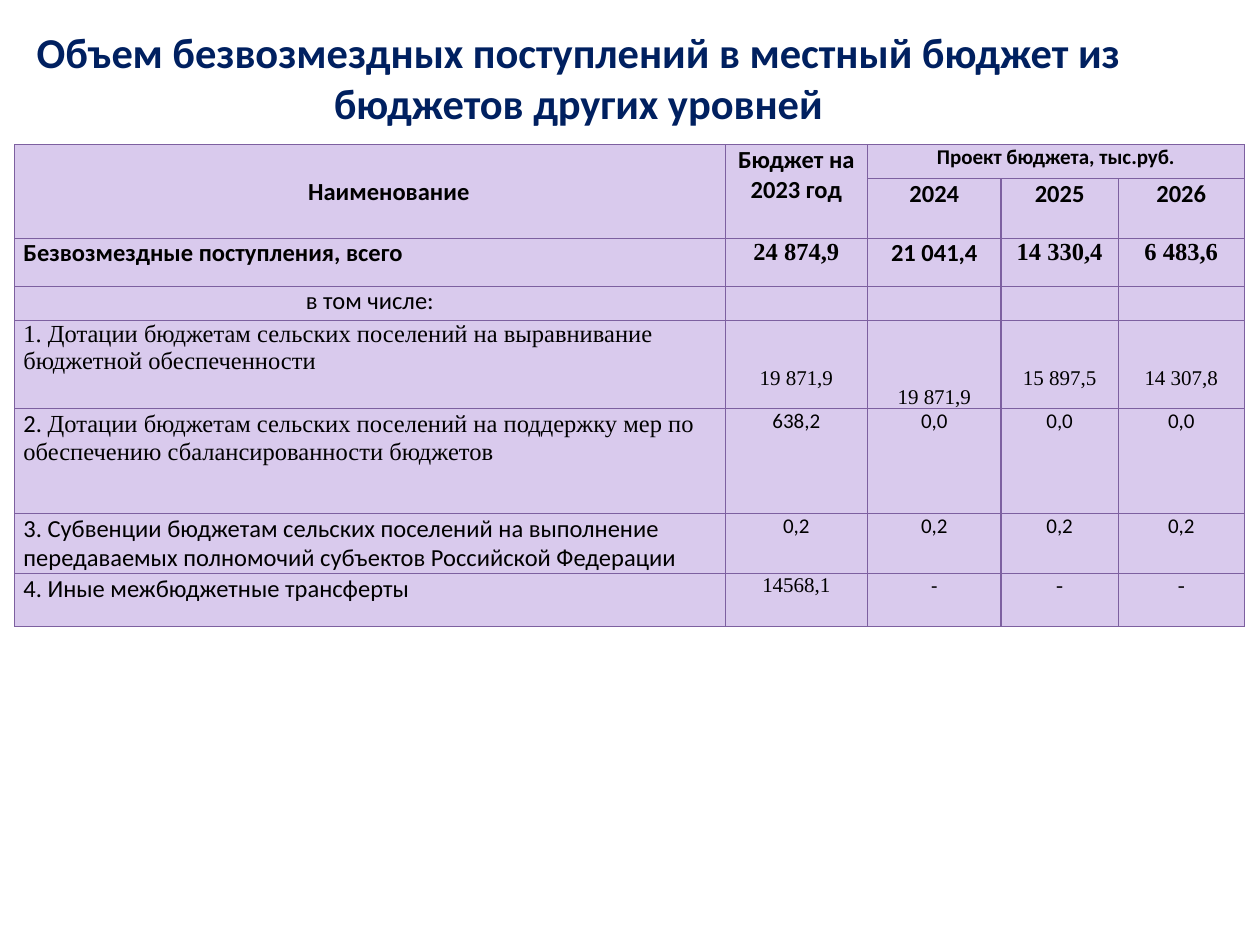
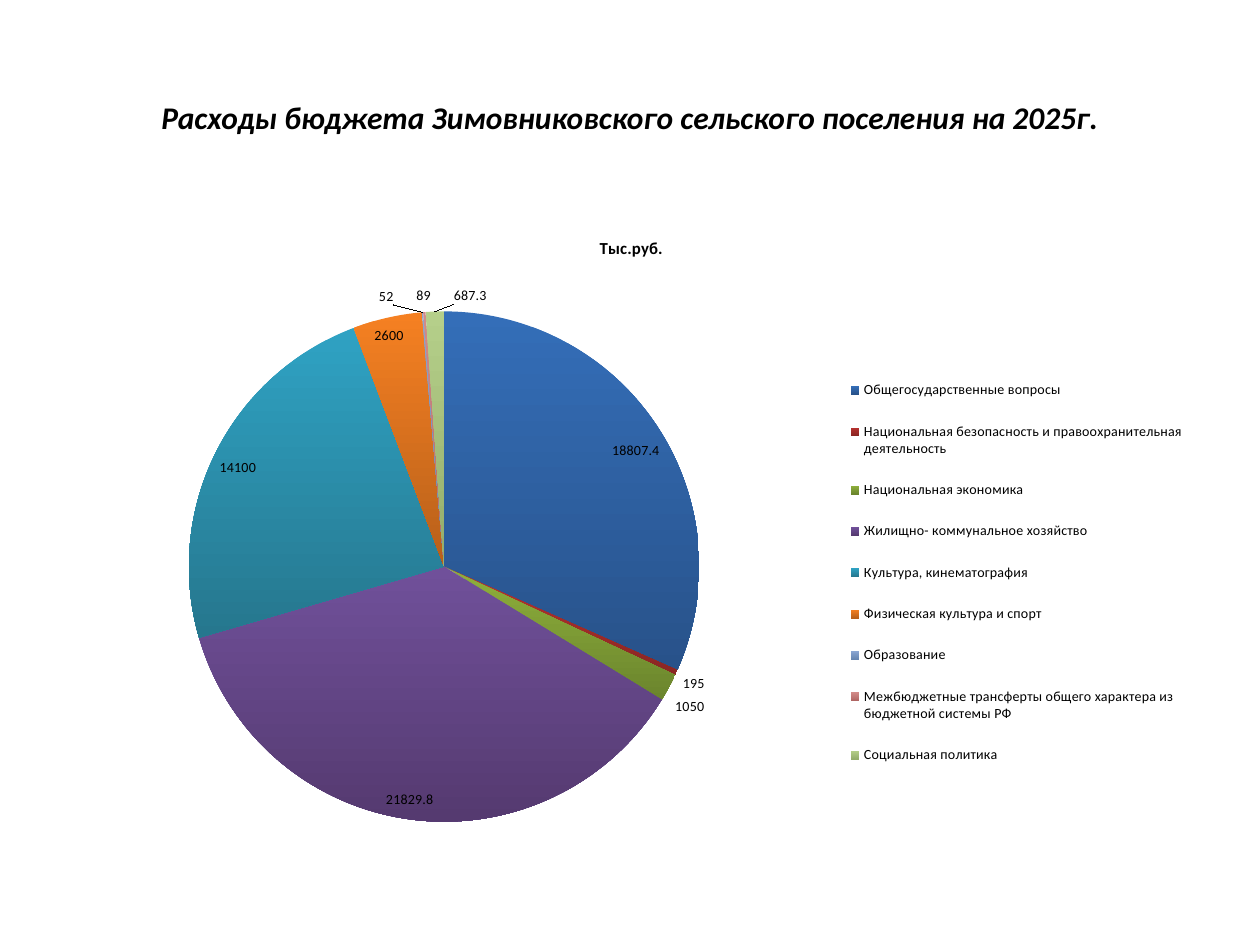
from dataclasses import dataclass

from lxml import etree
from pptx import Presentation
from pptx.chart import data as chart_data
from pptx.dml import color
from pptx.enum import chart as chart_enum, text
from pptx.oxml import ns
from pptx.util import Pt

ALIGN = text.PP_ALIGN
ANCHOR = text.MSO_ANCHOR


@dataclass(frozen=True)
class Theme:
    sans: str = "Calibri"
    serif: str = "Times New Roman"
    ink: str = "000000"
    navy: str = "002060"
    lilac: str = "D9CAED"
    border: str = "7D60A0"
    table_title: float = 24.3
    chart_title: float = 18
    entry: float = 14
    figure: float = 12
    chart_heading: float = 9.6
    chart_text: float = 8
    border_width: float = 0.75


THEME = Theme()


@dataclass
class Entry:
    text: str = ""
    size: float = THEME.entry
    bold: bool = False
    face: str = THEME.sans
    align: ALIGN = ALIGN.CENTER
    anchor: ANCHOR = ANCHOR.TOP
    top: float = 0
    indent: float = 0
    number: str = ""


def heading(label, **changes):
    return Entry(label, bold=True, **changes)


def item(label, **changes):
    return Entry(label, align=ALIGN.LEFT, **changes)


def figure(label, **changes):
    return Entry(label, size=THEME.figure, **changes)


SERIF = {"face": THEME.serif}
LOWERED = {"face": THEME.serif, "top": 26}

COLUMNS = [406, 81.4, 76.3, 67, 72]
ROW_HEIGHTS = [19.4, 33.7, 27.4, 19.7, 50.3, 60, 34.3, 30.2]
MERGES = [((0, 0), (1, 0)), ((0, 1), (1, 1)), ((0, 2), (0, 4))]
BUDGET_ROWS = [
    [heading("Наименование", anchor=ANCHOR.MIDDLE, indent=21.6),
     heading("Бюджет на 2023 год"),
     heading("Проект бюджета, тыс.руб.", size=THEME.figure), Entry(), Entry()],
    [Entry(), Entry(), *(heading(year) for year in ("2024", "2025", "2026"))],
    [heading("Безвозмездные поступления, всего", align=ALIGN.LEFT),
     heading("24 874,9", **SERIF), heading("21 041,4"),
     heading("14 330,4", **SERIF), heading("6 483,6", **SERIF)],
    [Entry("в том числе:"), *(Entry() for _ in range(4))],
    [item("1. Дотации бюджетам сельских поселений на выравнивание "
          "бюджетной обеспеченности", **SERIF),
     figure("19 871,9", **LOWERED),
     figure("19 871,9", anchor=ANCHOR.BOTTOM, **SERIF),
     figure("15 897,5", **LOWERED), figure("14 307,8", **LOWERED)],
    [item("Дотации бюджетам сельских поселений на поддержку мер по "
          "обеспечению сбалансированности бюджетов", number="2. ", **SERIF),
     *(figure(amount) for amount in ("638,2", "0,0", "0,0", "0,0"))],
    [item("3. Субвенции бюджетам сельских поселений на выполнение "
          "передаваемых полномочий субъектов Российской Федерации"),
     *(figure("0,2") for _ in range(4))],
    [Entry("4. Иные межбюджетные трансферты", align=ALIGN.JUSTIFY),
     figure("14568,1", **SERIF), figure("-"),
     figure("-", **SERIF), figure("-", **SERIF)],
]

EXPENSES = [
    ("Общегосударственные вопросы", 18807.4, "346EB8", "28528A"),
    ("Национальная безопасность и правоохранительная деятельность",
     195, "B8322F", "8A2623"),
    ("Национальная экономика", 1050, "8FB03C", "6B852D"),
    ("Жилищно- коммунальное хозяйство", 21829.8, "70509A", "553A70"),
    ("Культура, кинематография", 14100, "2FA2C3", "26778E"),
    ("Физическая культура и спорт", 2600, "F58022", "B8601A"),
    ("Образование", 52, "8AA6D2", "6685B0"),
    ("Межбюджетные трансферты общего характера из бюджетной системы РФ",
     89, "D28B89", "B06664"),
    ("Социальная политика", 687.3, "B5CF8A", "94AD6B"),
]


def rgb(value):
    return color.RGBColor.from_string(value)


def apply(target, values):
    for name, value in values.items():
        setattr(target, name, value)


def style_font(font, size, face=THEME.sans, ink=THEME.ink, bold=False,
               italic=False):
    apply(font, {"size": Pt(size), "name": face, "bold": bold,
                 "italic": italic})
    font.color.rgb = rgb(ink)


def add_titled_slide(presentation, title, box, anchor, **font):
    slide = presentation.slides.add_slide(presentation.slide_layouts[5])
    shape = slide.shapes.title
    apply(shape, dict(zip(("left", "top", "width", "height"), map(Pt, box))))
    frame = shape.text_frame
    apply(frame, {"vertical_anchor": anchor, "word_wrap": True,
                  "auto_size": text.MSO_AUTO_SIZE.NONE,
                  "margin_top": 0, "margin_bottom": 0})
    paragraph = frame.paragraphs[0]
    paragraph.alignment = ALIGN.CENTER
    run = paragraph.add_run()
    run.text = title
    style_font(run.font, bold=True, **font)
    return slide


def outline_cell(cell):
    properties = cell._tc.get_or_add_tcPr()
    for side in ("lnL", "lnR", "lnT", "lnB"):
        line = etree.SubElement(properties, ns.qn(f"a:{side}"),
                                w=str(Pt(THEME.border_width)))
        fill = etree.SubElement(line, ns.qn("a:solidFill"))
        etree.SubElement(fill, ns.qn("a:srgbClr"), val=THEME.border)


def fill_cell(cell, entry):
    outline_cell(cell)
    cell.fill.solid()
    cell.fill.fore_color.rgb = rgb(THEME.lilac)
    apply(cell, {"margin_left": Pt(5), "margin_right": Pt(5),
                 "margin_top": Pt(entry.top), "margin_bottom": 0,
                 "vertical_anchor": entry.anchor})
    paragraph = cell.text_frame.paragraphs[0]
    paragraph.alignment = entry.align
    if entry.indent:
        paragraph._p.get_or_add_pPr().set("indent", str(Pt(entry.indent)))
    for words, face in ((entry.number, THEME.sans), (entry.text, entry.face)):
        if words:
            run = paragraph.add_run()
            run.text = words
            style_font(run.font, entry.size, face, bold=entry.bold)
    if not entry.text:
        etree.SubElement(paragraph._p, ns.qn("a:endParaRPr"),
                         sz=str(THEME.figure * 100))


def add_budget_table(slide):
    frame = slide.shapes.add_table(
        len(BUDGET_ROWS), len(COLUMNS), Pt(8.4), Pt(82.8),
        Pt(sum(COLUMNS)), Pt(sum(ROW_HEIGHTS)))
    table = frame.table
    apply(table, {"first_row": False, "horz_banding": False})
    for column, width in zip(table.columns, COLUMNS):
        column.width = Pt(width)
    for row, height, entries in zip(table.rows, ROW_HEIGHTS, BUDGET_ROWS):
        row.height = Pt(height)
        for cell, entry in zip(row.cells, entries):
            fill_cell(cell, entry)
    for start, end in MERGES:
        table.cell(*start).merge(table.cell(*end))


def place_chart_part(part, follows, box, inner=False):
    for layout in part.findall(ns.qn("c:layout")):
        part.remove(layout)
    layout = etree.Element(ns.qn("c:layout"))
    manual = etree.SubElement(layout, ns.qn("c:manualLayout"))
    settings = {"layoutTarget": "inner"} if inner else {}
    settings.update(xMode="edge", yMode="edge")
    settings.update(zip("xywh", map(str, box)))
    for name, value in settings.items():
        etree.SubElement(manual, ns.qn(f"c:{name}"), val=value)
    part.insert(follows, layout)


def add_expense_pie(slide):
    data = chart_data.CategoryChartData()
    data.categories = [name for name, *_ in EXPENSES]
    data.add_series("Тыс.руб.", [amount for _, amount, *_ in EXPENSES])
    chart = slide.shapes.add_chart(
        chart_enum.XL_CHART_TYPE.PIE, Pt(36.7), Pt(122.4), Pt(648),
        Pt(356.4), data).chart
    style_font(chart.font, THEME.chart_text)
    chart.has_title = True
    paragraph = chart.chart_title.text_frame.paragraphs[0]
    run = paragraph.add_run()
    run.text = "Тыс.руб."
    style_font(run.font, THEME.chart_heading, bold=True)

    plot = chart.plots[0]
    plot.vary_by_categories = True
    plot.has_data_labels = True
    apply(plot.data_labels, {
        "show_value": True, "show_percentage": False,
        "number_format": "General", "number_format_is_linked": False,
        "position": chart_enum.XL_LABEL_POSITION.BEST_FIT})
    for index, (_, _, light, dark) in enumerate(EXPENSES):
        fill = plot.series[0].points[index].format.fill
        fill.gradient()
        fill.gradient_angle = 270
        for stop, shade in zip(fill.gradient_stops, (light, dark)):
            stop.color.rgb = rgb(shade)

    chart.has_legend = True
    apply(chart.legend, {"position": chart_enum.XL_LEGEND_POSITION.RIGHT,
                         "include_in_layout": False})
    style_font(chart.legend.font, THEME.chart_text)
    plot_area = chart._chartSpace.find(f".//{ns.qn('c:plotArea')}")
    place_chart_part(plot_area, 0, (0.11, 0.15, 0.45, 0.83), inner=True)
    place_chart_part(chart.legend._element, 1, (0.69, 0.23, 0.3, 0.69))


def main():
    presentation = Presentation()
    apply(presentation, {"slide_width": Pt(720), "slide_height": Pt(540)})
    income = add_titled_slide(
        presentation,
        "Объем безвозмездных поступлений в местный бюджет из бюджетов "
        "других уровней", (6.5, 15, 648, 73), ANCHOR.TOP,
        size=THEME.table_title, ink=THEME.navy)
    add_budget_table(income)
    expenses = add_titled_slide(
        presentation,
        "Расходы бюджета Зимовниковского сельского поселения на 2025г.",
        (36, 21.6, 648, 90), ANCHOR.MIDDLE,
        size=THEME.chart_title, italic=True)
    add_expense_pie(expenses)
    presentation.save("out.pptx")


if __name__ == "__main__":
    main()
